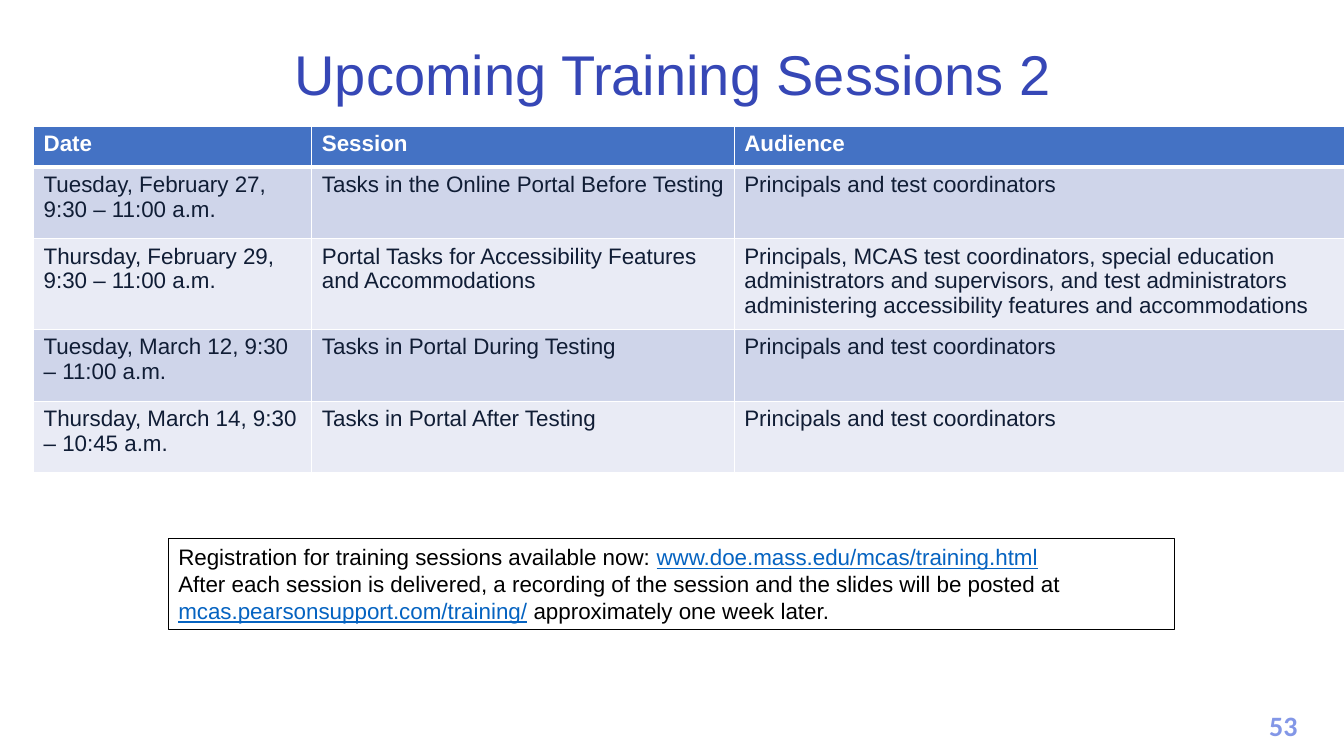
"""Build the slide that lists upcoming training sessions."""
from typing import NamedTuple

from lxml import etree
from pptx import Presentation, util as u
from pptx.dml.color import RGBColor
from pptx.enum import shapes, text
from pptx.oxml import ns

WIDE, HIGH = 13.33, 7.5
HUES = {
    "title": "3647B6", "page": "8397E7", "head": "4472C4", "odd": "CFD5EA",
    "even": "E9EBF5", "ink": "101D35", "black": "000000", "white": "FFFFFF",
    "link": "0563C1",
}
COLS = (2.76, 4.19, 6.06)
ROWS = (0.41, 0.71, 0.71, 0.71, 0.71)


class Box(NamedTuple):
    """Left, top, width and height as shares of the slide."""
    x: float
    y: float
    w: float
    h: float

    def place(self) -> tuple:
        return (u.Inches(self.x * WIDE), u.Inches(self.y * HIGH),
                u.Inches(self.w * WIDE), u.Inches(self.h * HIGH))


class Row(NamedTuple):
    date: str
    topic: str
    crowd: str


TITLE = Box(0.069, 0.0267, 0.8627, 0.152)
GRID = Box(0.025, 0.1667, 0.976, 0.4333)
NOTE = Box(0.1253, 0.712, 0.7487, 0.1213)
PAGE = Box(0.9317, 0.9307, 0.0465, 0.0587)

LEADS = "Principals and test coordinators"
PLAN = (
    Row("Date", "Session", "Audience"),
    Row("Tuesday, February 27, 9:30 – 11:00 a.m.",
        "Tasks in the Online Portal Before Testing", LEADS),
    Row("Thursday, February 29, 9:30 – 11:00 a.m.",
        "Portal Tasks for Accessibility Features and Accommodations",
        "Principals, MCAS test coordinators, special education administrators "
        "and supervisors, and test administrators administering accessibility "
        "features and accommodations"),
    Row("Tuesday, March 12, 9:30 – 11:00 a.m.",
        "Tasks in Portal During Testing", LEADS),
    Row("Thursday, March 14, 9:30 – 10:45 a.m.",
        "Tasks in Portal After Testing", LEADS),
)


def hue(name: str) -> RGBColor:
    return RGBColor.from_string(HUES[name])


def write(para, words: str, *, size: float = 16, face: str = "Arial",
          color: str = "black", bold: bool = False, line: bool = False,
          align=text.PP_ALIGN.LEFT) -> None:
    para.alignment = align
    run = para.add_run()
    run.text = words
    font = run.font
    font.size, font.name = u.Pt(size), face
    font.bold, font.underline = bold, line
    font.color.rgb = hue(color)


def edge(cell, side: str, width: float) -> None:
    props = cell._tc.get_or_add_tcPr()
    rule = etree.SubElement(props, ns.qn(f"a:ln{side}"), w=str(u.Pt(width)))
    fill = etree.SubElement(rule, ns.qn("a:solidFill"))
    etree.SubElement(fill, ns.qn("a:srgbClr"), val=HUES["white"])


def draw_title(slide) -> None:
    title = slide.shapes.title
    title.left, title.top, title.width, title.height = TITLE.place()
    frame = title.text_frame
    frame.auto_size = text.MSO_AUTO_SIZE.NONE
    frame.vertical_anchor = text.MSO_ANCHOR.MIDDLE
    para = frame.paragraphs[0]
    para.line_spacing = 0.9
    write(para, "Upcoming Training Sessions 2", size=40, color="title",
          align=text.PP_ALIGN.CENTER)


def draw_plan(slide) -> None:
    table = slide.shapes.add_table(len(ROWS), len(COLS), *GRID.place()).table
    for col, width in zip(table.columns, COLS):
        col.width = u.Inches(width)
    for r, (row, height) in enumerate(zip(PLAN, ROWS)):
        table.rows[r].height = u.Inches(height)
        head = r == 0
        fill = "head" if head else "odd" if r % 2 else "even"
        for c, words in enumerate(row):
            cell = table.cell(r, c)
            for side in "LRTB":
                thick = (head and side == "B") or (r == 1 and side == "T")
                edge(cell, side, 3 if thick else 1)
            cell.fill.solid()
            cell.fill.fore_color.rgb = hue(fill)
            write(cell.text_frame.paragraphs[0], words, bold=head,
                  color="white" if head else "ink")


def draw_note(slide) -> None:
    note = slide.shapes.add_shape(shapes.MSO_SHAPE.RECTANGLE, *NOTE.place())
    note.shadow.inherit = False
    note.fill.solid()
    note.fill.fore_color.rgb = hue("white")
    note.line.color.rgb = hue("black")
    note.line.width = u.Pt(0.75)
    frame = note.text_frame
    frame.word_wrap = True
    frame.vertical_anchor = text.MSO_ANCHOR.TOP
    first, last = frame.paragraphs[0], frame.add_paragraph()
    write(first, "Registration for training sessions available now: ")
    write(first, "www.doe.mass.edu/mcas/training.html", color="link", line=True)
    write(last, "After each session is delivered, a recording of the session "
                "and the slides will be posted at ")
    write(last, "mcas.pearsonsupport.com/training/", color="link", line=True)
    write(last, " approximately one week later.")


def draw_page(slide) -> None:
    frame = slide.shapes.add_textbox(*PAGE.place()).text_frame
    frame.word_wrap = True
    write(frame.paragraphs[0], "53", size=20, face="Calibri", color="page",
          bold=True, align=text.PP_ALIGN.CENTER)


def main() -> None:
    deck = Presentation()
    deck.slide_width, deck.slide_height = u.Inches(WIDE), u.Inches(HIGH)
    slide = deck.slides.add_slide(deck.slide_layouts[5])
    for draw in (draw_page, draw_title, draw_plan, draw_note):
        draw(slide)
    deck.save("out.pptx")


if __name__ == "__main__":
    main()
